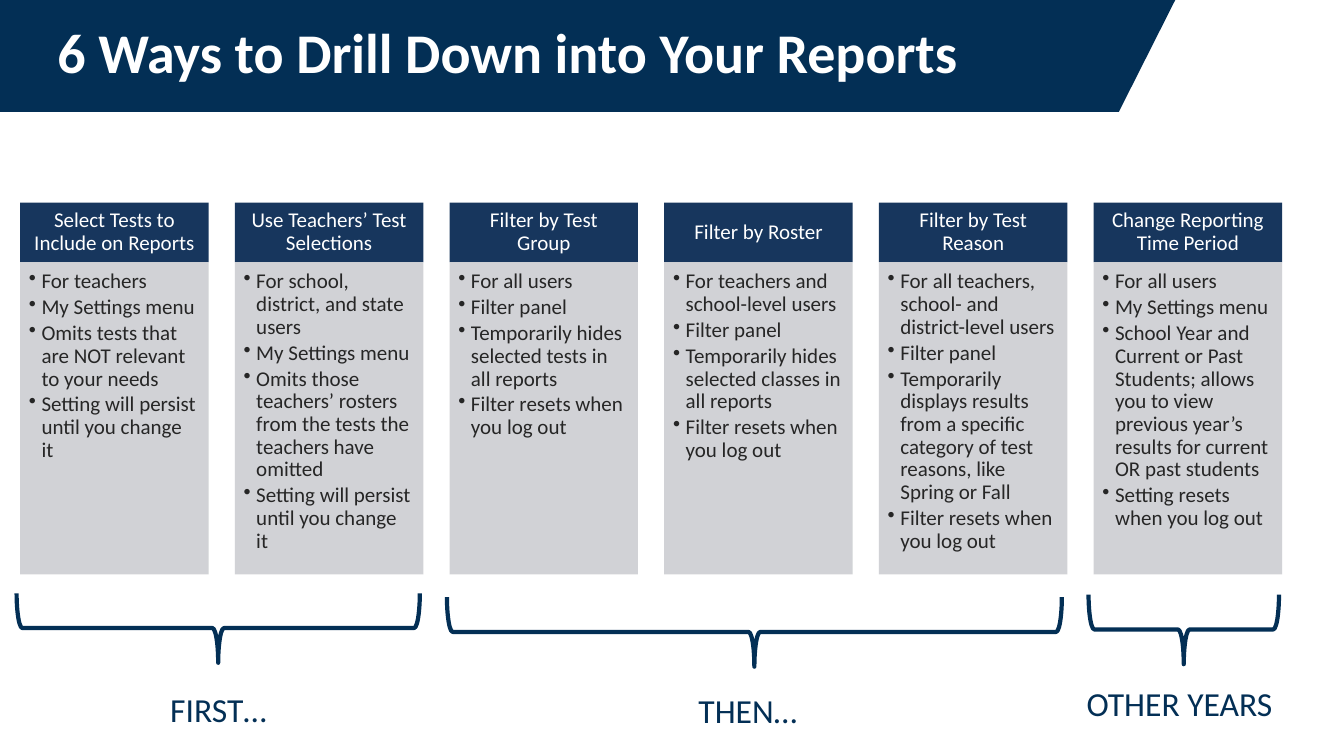
from dataclasses import dataclass

from lxml import etree
from pptx import Presentation
from pptx.dml.color import RGBColor
from pptx.enum import shapes, text
from pptx.oxml.ns import qn
from pptx.util import Pt

TITLE = "6 Ways to Drill Down into Your Reports"
WAYS = [
    ("Select Tests to Include on Reports", [
        "For teachers",
        "My Settings menu",
        "Omits tests that are NOT relevant to your needs",
        "Setting will persist until you change it"]),
    ("Use Teachers’ Test Selections", [
        "For school, district, and state users",
        "My Settings menu",
        "Omits those teachers’ rosters from the tests the teachers have omitted",
        "Setting will persist until you change it"]),
    ("Filter by Test Group", [
        "For all users",
        "Filter panel",
        "Temporarily hides selected tests in all reports",
        "Filter resets when you log out"]),
    ("Filter by Roster", [
        "For teachers and school-level users",
        "Filter panel",
        "Temporarily hides selected classes in all reports",
        "Filter resets when you log out"]),
    ("Filter by Test Reason", [
        "For all teachers, school- and district-level users",
        "Filter panel",
        "Temporarily displays results from a specific category of test reasons, "
        "like Spring or Fall",
        "Filter resets when you log out"]),
    ("Change Reporting Time Period", [
        "For all users",
        "My Settings menu",
        "School Year and Current or Past Students; allows you to view previous "
        "year’s results for current OR past students",
        "Setting resets when you log out"]),
]
# label, (label left, top, width), brace (centre x, centre y, span)
STAGES = [
    ("FIRST…", (114.5, 488.2, 93.6), (155.9, 448.6, 288)),
    ("THEN…", (491.8, 489.6, 93.6), (538.9, 451.4, 439.2)),
    ("OTHER YEARS", (769, 484.6, 152.6), (845.6, 449.6, 136)),
]
BANNER = [(0, 0), (839.5, 0), (799.2, 79.9), (0, 79.9)]


@dataclass(frozen=True)
class Theme:
    font: str = "Calibri"
    navy: RGBColor = RGBColor(0x03, 0x2F, 0x55)
    header: RGBColor = RGBColor(0x17, 0x36, 0x5D)
    panel: RGBColor = RGBColor(0xCC, 0xCE, 0xD2)
    white: RGBColor = RGBColor(0xFF, 0xFF, 0xFF)
    ink: RGBColor = RGBColor(0x26, 0x26, 0x26)
    title_size: int = 40
    stage_size: int = 24
    card_size: int = 15


THEME = Theme()
COLUMN_LEFT, COLUMN_STEP, COLUMN_WIDTH = 14.4, 153.36, 134.64
HEADER_TOP, HEADER_HEIGHT, PANEL_HEIGHT = 144.7, 42.5, 223.2
BRACE_DEPTH, BULLET_INDENT = 49.6, 9


def set_all(target, **values):
    for name, value in values.items():
        setattr(target, name, value)


def set_frame(frame, insets, anchor):
    left, top, right, bottom = map(Pt, insets)
    set_all(frame, word_wrap=True, vertical_anchor=anchor, margin_left=left,
            margin_top=top, margin_right=right, margin_bottom=bottom)


def set_font(paragraph, size, color, bold=False):
    set_all(paragraph.font, name=THEME.font, size=Pt(size), bold=bold)
    paragraph.font.color.rgb = color


def add_bullet(paragraph):
    properties = paragraph._p.get_or_add_pPr()
    properties.set("marL", str(Pt(BULLET_INDENT)))
    properties.set("indent", str(-Pt(BULLET_INDENT)))
    etree.SubElement(properties, qn("a:buChar")).set("char", "•")


def paint(shape, color):
    shape.shadow.inherit = False
    shape.fill.solid()
    shape.fill.fore_color.rgb = color
    shape.line.fill.background()


def add_block(slide, left, top, height, color):
    block = slide.shapes.add_shape(shapes.MSO_SHAPE.RECTANGLE, Pt(left), Pt(top),
                                   Pt(COLUMN_WIDTH), Pt(height))
    paint(block, color)
    return block


def add_way(slide, left, heading, points):
    header = add_block(slide, left, HEADER_TOP, HEADER_HEIGHT, THEME.header)
    set_frame(header.text_frame, (8.4, 4.8, 8.4, 4.8), text.MSO_ANCHOR.MIDDLE)
    caption = header.text_frame.paragraphs[0]
    set_all(caption, text=heading, alignment=text.PP_ALIGN.CENTER, line_spacing=0.9)
    set_font(caption, THEME.card_size, THEME.white)

    panel = add_block(slide, left, HEADER_TOP + HEADER_HEIGHT, PANEL_HEIGHT, THEME.panel)
    panel_color = panel.fill._xPr.find(".//" + qn("a:srgbClr"))
    etree.SubElement(panel_color, qn("a:alpha")).set("val", "90000")
    frame = panel.text_frame
    set_frame(frame, (6.3, 6.3, 8.4, 9.45), text.MSO_ANCHOR.TOP)
    for index, point in enumerate(points):
        item = frame.add_paragraph() if index else frame.paragraphs[0]
        set_all(item, text=point, alignment=text.PP_ALIGN.LEFT, line_spacing=0.9,
                space_after=Pt(2.25))
        add_bullet(item)
        set_font(item, THEME.card_size, THEME.ink)


def add_stage(slide, label, label_box, brace_box):
    left, top, width = label_box
    box = slide.shapes.add_textbox(Pt(left), Pt(top), Pt(width), Pt(36))
    box.text_frame.word_wrap = True
    line = box.text_frame.paragraphs[0]
    line.text = label
    set_font(line, THEME.stage_size, THEME.navy)

    center_x, center_y, span = brace_box
    brace = slide.shapes.add_shape(
        shapes.MSO_SHAPE.LEFT_BRACE, Pt(center_x - BRACE_DEPTH / 2),
        Pt(center_y - span / 2), Pt(BRACE_DEPTH), Pt(span))
    brace.rotation = 270
    brace.shadow.inherit = False
    brace.fill.background()
    brace.line.color.rgb = THEME.navy
    brace.line.width = Pt(3)


def add_title(slide):
    start, *corners = [(Pt(x), Pt(y)) for x, y in BANNER]
    outline = slide.shapes.build_freeform(*start)
    outline.add_line_segments(corners, close=True)
    banner = outline.convert_to_shape()
    paint(banner, THEME.navy)
    title = slide.shapes.title
    title._element.addprevious(banner._element)

    set_all(title, left=Pt(33.8), top=Pt(0.7), width=Pt(828), height=Pt(77.8))
    set_frame(title.text_frame, (7.2, 3.6, 7.2, 3.6), text.MSO_ANCHOR.MIDDLE)
    heading = title.text_frame.paragraphs[0]
    set_all(heading, text=TITLE, alignment=text.PP_ALIGN.LEFT, line_spacing=0.9)
    set_font(heading, THEME.title_size, THEME.white, bold=True)


def main():
    deck = Presentation()
    set_all(deck, slide_width=Pt(960), slide_height=Pt(540))
    slide = deck.slides.add_slide(deck.slide_layouts[5])
    add_title(slide)
    for stage in STAGES:
        add_stage(slide, *stage)
    for column, (heading, points) in enumerate(WAYS):
        add_way(slide, COLUMN_LEFT + column * COLUMN_STEP, heading, points)
    deck.save("out.pptx")


if __name__ == "__main__":
    main()
